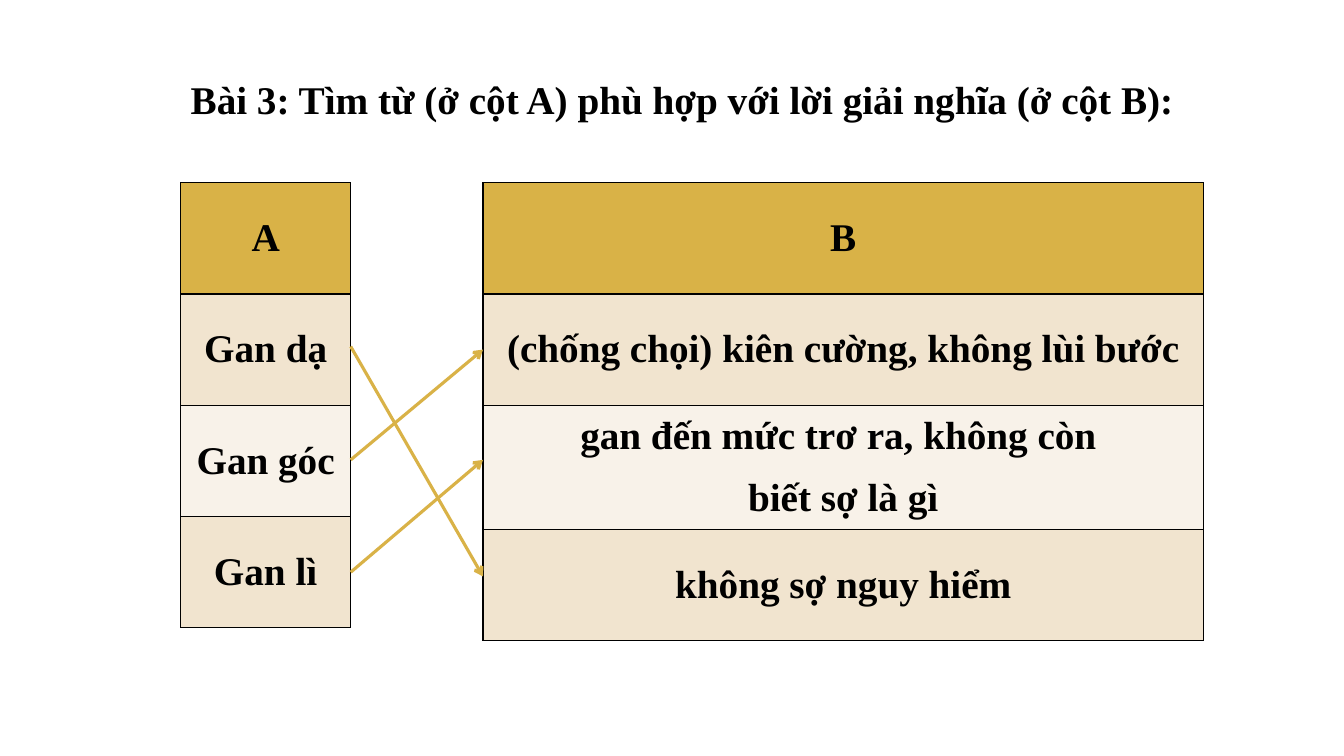
from dataclasses import dataclass
from lxml.etree import SubElement as Sub
from pptx import Presentation
from pptx.dml.color import RGBColor as Rgb
from pptx.enum.shapes import MSO_CONNECTOR as Link
from pptx.enum.text import MSO_ANCHOR as Anchor, MSO_AUTO_SIZE as Fit, PP_ALIGN as Align
from pptx.oxml import parse_xml
from pptx.oxml.ns import nsdecls, qn
from pptx.util import Pt

PX = 9525


@dataclass
class Theme:
    font: str = "Times New Roman"
    size: int = 28
    gap: int = 13
    ink: str = "000000"
    gold: str = "D9B247"
    sand: str = "F1E4CF"
    cream: str = "F8F2E9"
    edge: float = 1
    arrow: float = 2.25


theme = Theme()


def style(frame, align):
    for i, par in enumerate(frame.paragraphs):
        par.alignment = align
        par.space_before = Pt(theme.gap if i else 0)
        for run in par.runs:
            font = run.font
            font.name, font.size, font.bold = theme.font, Pt(theme.size), True
            font.color.rgb = Rgb.from_string(theme.ink)


def frame_cell(cell):
    props = cell._tc.get_or_add_tcPr()
    for i, side in enumerate("LRTB"):
        props.insert(i, parse_xml(
            f'<a:ln{side} {nsdecls("a")} w="{Pt(theme.edge)}"><a:solidFill>'
            f'<a:srgbClr val="{theme.ink}"/></a:solidFill></a:ln{side}>'))


deck = Presentation()
deck.slide_width, deck.slide_height = 1280 * PX, 720 * PX
slide = deck.slides.add_slide(deck.slide_layouts[5])
shapes = slide.shapes

title = shapes.title
title.left, title.top, title.width, title.height = 172 * PX, 67 * PX, 998 * PX, 55 * PX
text = title.text_frame
text.text = "Bài 3: Tìm từ (ở cột A) phù hợp với lời giải nghĩa (ở cột B):"
text.word_wrap = True
text.auto_size = Fit.SHAPE_TO_FIT_TEXT
text.vertical_anchor = Anchor.TOP
style(text, Align.LEFT)

top, row, tall = 174, 106, 118
words = ["A", "Gan dạ", "Gan góc", "Gan lì"]
means = [
    "B",
    "(chống chọi) kiên cường, không lùi bước",
    "gan đến mức trơ ra, không còn \nbiết sợ là gì",
    "không sợ nguy hiểm",
]
fills = [theme.gold, theme.sand, theme.cream, theme.sand]

for left, width, items in [(172, 162, words), (460, 686, means)]:
    highs = [tall if "\n" in item else row for item in items]
    table = shapes.add_table(
        len(items), 1, left * PX, top * PX, width * PX, sum(highs) * PX).table
    table.first_row = table.horz_banding = False
    for i, (item, high, fill) in enumerate(zip(items, highs, fills)):
        table.rows[i].height = high * PX
        cell = table.cell(i, 0)
        cell.text_frame.text = item
        cell.vertical_anchor = Anchor.MIDDLE
        cell.fill.solid()
        cell.fill.fore_color.rgb = Rgb.from_string(fill)
        style(cell.text_frame, Align.CENTER)
        frame_cell(cell)

for start, end in [(330, 549), (438, 333), (545, 438)]:
    link = shapes.add_connector(Link.STRAIGHT, 334 * PX, start * PX, 460 * PX, end * PX)
    link.line.color.rgb = Rgb.from_string(theme.gold)
    link.line.width = Pt(theme.arrow)
    Sub(link.line._get_or_add_ln(), qn("a:tailEnd"), type="arrow")
    Sub(link._element.spPr, qn("a:effectLst"))

deck.save("out.pptx")
